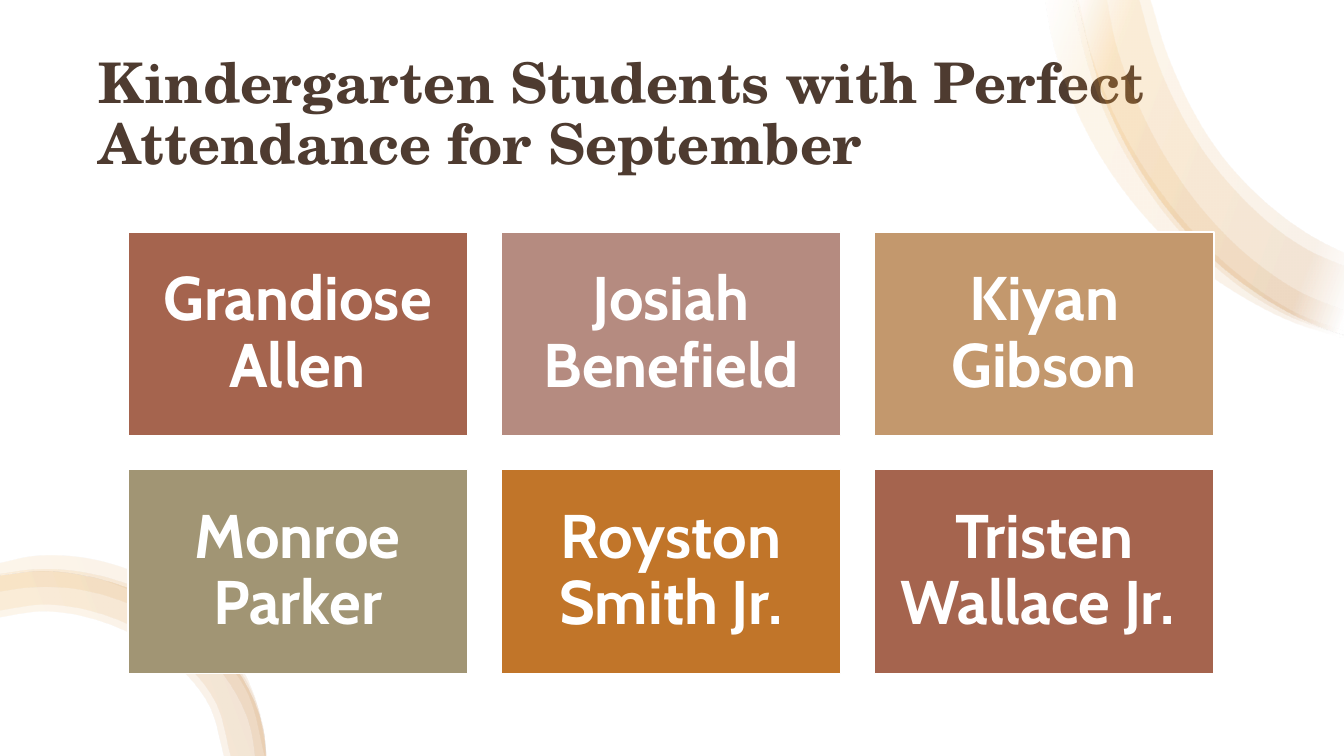
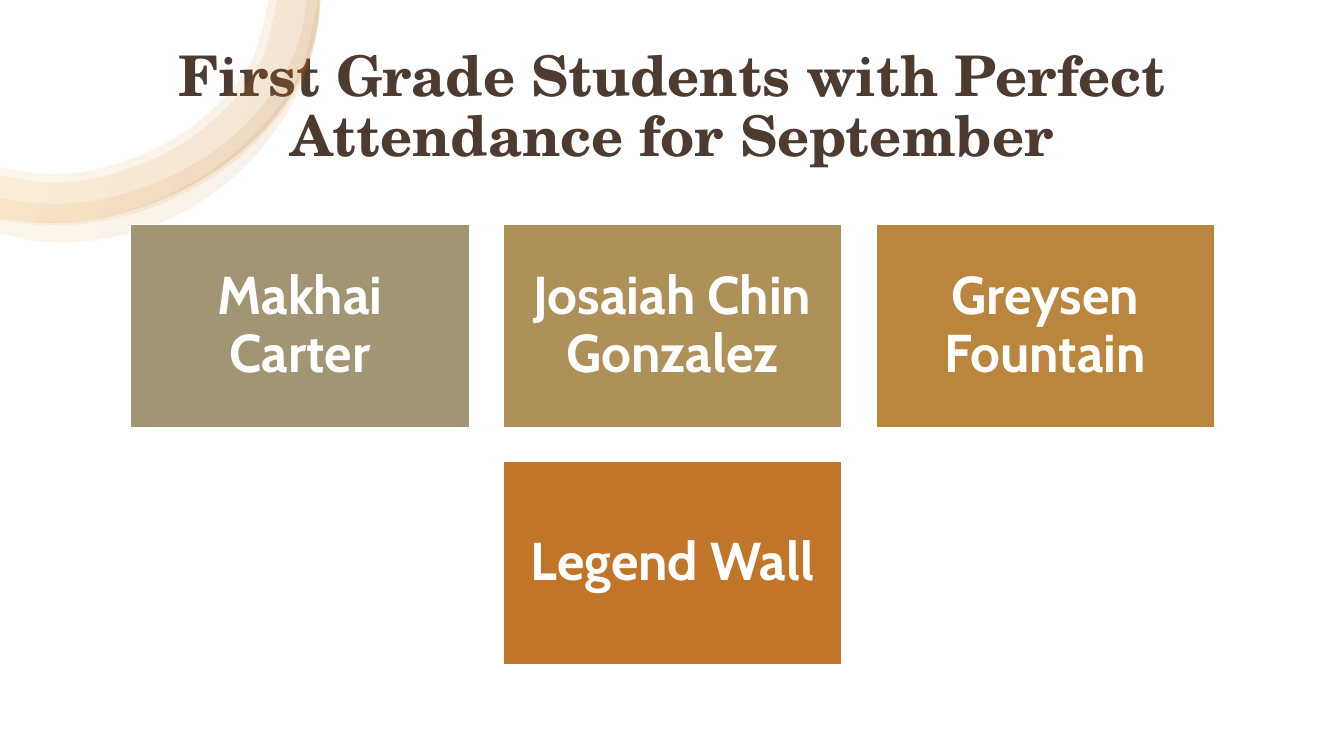
from math import dist
from typing import NamedTuple

from lxml import etree
from pptx import Presentation
from pptx.dml.color import RGBColor
from pptx.enum.shapes import MSO_SHAPE
from pptx.enum.text import MSO_ANCHOR, PP_ALIGN
from pptx.oxml.ns import qn
from pptx.util import Inches, Pt

RECTANGLE = MSO_SHAPE.RECTANGLE
MIDDLE = MSO_ANCHOR.MIDDLE
LEFT, CENTER = PP_ALIGN.LEFT, PP_ALIGN.CENTER

SLIDE_WIDTH, SLIDE_HEIGHT = Inches(13.333), Inches(7.5)
TITLE_FONT, NAME_FONT = "TeX Gyre Schola", "Cabin"
WHITE = RGBColor(0xFF, 0xFF, 0xFF)
BROWN = RGBColor(0x4E, 0x3B, 0x30)
RUST = RGBColor(0xA5, 0x64, 0x4E)
ROSE = RGBColor(0xB5, 0x8B, 0x80)
TAN = RGBColor(0xC3, 0x98, 0x6D)
SAGE = RGBColor(0xA1, 0x95, 0x74)
OLIVE = RGBColor(0xAE, 0x91, 0x59)
OCHRE = RGBColor(0xBA, 0x86, 0x3E)
ORANGE = RGBColor(0xC1, 0x75, 0x29)
AMBER = RGBColor(0xF0, 0xA2, 0x2E)

RIBBON_STOPS = ((2, WHITE), (16, ORANGE), (85, AMBER), (100, WHITE))
RIBBON_ANGLE = 160
RIBBON_OPACITY = 10
COLUMNS = 3
GAP_SHARE = 0.1


class Box(NamedTuple):
    """A region whose measures are percentages of the slide."""

    left: float
    top: float
    width: float
    height: float

    def to_emu(self):
        """Return left, top, width and height in slide units."""
        sides = (SLIDE_WIDTH, SLIDE_HEIGHT) * 2
        return [int(side * share / 100) for side, share in zip(sides, self)]


class Artwork(NamedTuple):
    """Ribbons as pairs of edges, drawn within a given extent."""

    extent: tuple
    ribbons: tuple


WHOLE_SLIDE = Box(0, 0, 100, 100)

RING_EDGE = ((3.17, 0), (3.16, 0.18), (2.86, 0.98), (2.24, 1.62),
             (1.41, 2.05), (0.49, 2.21), (0, 2.16))
RING = Artwork((3.2, 2.4), (
    (RING_EDGE,
     ((2.67, 0), (2.49, 0.61), (2, 1.18), (1.29, 1.58), (0.49, 1.73), (0, 1.66))),
    (RING_EDGE,
     ((2.75, 0), (2.57, 0.64), (2.06, 1.24), (1.32, 1.66), (0.49, 1.81), (0, 1.74))),
    (((3.17, 0), (3.13, 0.38), (2.99, 0.79), (2.46, 1.48), (1.71, 1.97),
      (0.84, 2.21), (0.38, 2.22), (0, 2.17)),
     ((3.04, 0), (2.98, 0.35), (2.6, 1.05), (2.32, 1.34), (1.61, 1.78),
      (0.81, 2), (0.39, 2.01), (0, 1.96))),
    (((3.19, 0), (3.02, 0.77), (2.53, 1.54), (1.79, 2.11), (0.86, 2.38),
      (0.38, 2.38), (0, 2.3)),
     ((3.16, 0), (2.96, 0.74), (2.42, 1.43), (1.68, 1.92), (0.84, 2.18),
      (0.39, 2.2), (0, 2.16))),
))

SWEEP_EDGE = ((0.35, 0), (0.66, 1.07), (1.19, 2), (1.9, 2.74), (2.76, 3.24), (3, 3.32))
SWEEP = Artwork((3, 3.35), (
    (((0.04, 0), (0.08, 0.26), (0.45, 1.31), (0.95, 2.06), (1.32, 2.45),
      (1.88, 2.87), (2.49, 3.19), (3, 3.35)),
     ((0.37, 0), (0.49, 0.52), (0.73, 1.15), (1.21, 1.94), (1.97, 2.73),
      (2.53, 3.1), (3, 3.28))),
    (SWEEP_EDGE,
     ((1.08, 0), (1.25, 0.55), (1.86, 1.64), (2.74, 2.38), (3, 2.51))),
    (((0.31, 0), (0.35, 0.2), (0.66, 1.19), (0.99, 1.79), (1.4, 2.33),
      (2.46, 3.14), (3, 3.33)),
     ((0.65, 0), (0.74, 0.44), (0.96, 1.04), (1.62, 2.11), (2.06, 2.55),
      (2.57, 2.9), (3, 3.08))),
    (SWEEP_EDGE,
     ((0.97, 0), (1.14, 0.59), (1.77, 1.72), (2.68, 2.5), (3, 2.64))),
))


def edge_tangents(anchors):
    """Return the unit-speed direction of the curve at each anchor."""
    lengths = [dist(start, end) for start, end in zip(anchors, anchors[1:])]
    slopes = [tuple((b - a) / length for a, b in zip(start, end))
              for start, end, length in zip(anchors, anchors[1:], lengths)]
    inner = [tuple((a * after + b * before) / (before + after)
                   for a, b in zip(slope, following))
             for slope, following, before, after
             in zip(slopes, slopes[1:], lengths, lengths[1:])]
    return [slopes[0], *inner, slopes[-1]]


def curve_controls(anchors):
    """Return the two control points of each curve between anchors."""
    tangents = edge_tangents(anchors)
    controls = []
    for index, (start, end) in enumerate(zip(anchors, anchors[1:])):
        reach = dist(start, end) / 3
        controls.append((
            tuple(p + reach * t for p, t in zip(start, tangents[index])),
            tuple(p - reach * t for p, t in zip(end, tangents[index + 1]))))
    return controls


def bend_edges(shape, edges):
    """Turn the straight lines along both edges into curves."""
    lines = list(shape._element.spPr.iter(qn("a:lnTo")))
    outer_count = len(edges[0]) - 1
    edge_lines = lines[:outer_count] + lines[outer_count + 1:]
    controls = curve_controls(edges[0]) + curve_controls(edges[1])
    for line, pair in zip(edge_lines, controls):
        curve = etree.Element(qn("a:cubicBezTo"))
        for x, y in pair:
            etree.SubElement(curve, qn("a:pt"), x=str(int(x - shape.left)),
                             y=str(int(y - shape.top)))
        curve.append(line[0])
        line.getparent().replace(line, curve)


def fill_ribbon(shape, angle):
    """Give a ribbon its translucent gradient without an outline."""
    shape.shadow.inherit = False
    shape.line.fill.background()
    shape.fill.gradient()
    shape.fill.gradient_angle = angle
    stop_list = shape._element.spPr.find(f".//{qn('a:gsLst')}")
    for stop in list(stop_list):
        stop_list.remove(stop)
    for position, color in RIBBON_STOPS:
        stop = etree.SubElement(stop_list, qn("a:gs"), pos=str(position * 1000))
        paint = etree.SubElement(stop, qn("a:srgbClr"), val=str(color))
        etree.SubElement(paint, qn("a:alpha"), val=str(RIBBON_OPACITY * 1000))


def add_ribbons(slide, box, artwork, flipped=False):
    """Fit the artwork into the box, upside down if flipped."""
    left, top, width, height = box.to_emu()
    extent_width, extent_height = artwork.extent

    def place(anchor):
        """Return the slide position of an anchor."""
        x, y = anchor
        down = extent_height - y if flipped else y
        return (int(left + width * x / extent_width),
                int(top + height * down / extent_height))

    for outer, inner in artwork.ribbons:
        edges = [place(p) for p in outer], [place(p) for p in reversed(inner)]
        outline = edges[0] + edges[1]
        builder = slide.shapes.build_freeform(*outline[0])
        builder.add_line_segments(outline[1:], close=True)
        ribbon = builder.convert_to_shape()
        bend_edges(ribbon, edges)
        fill_ribbon(ribbon, 360 - RIBBON_ANGLE if flipped else RIBBON_ANGLE)


def write_text(frame, text, font_name, size, color, alignment):
    """Write one bold, vertically centred paragraph."""
    frame.word_wrap = True
    frame.vertical_anchor = MIDDLE
    paragraph = frame.paragraphs[0]
    paragraph.text = text
    paragraph.alignment = alignment
    paragraph.line_spacing = 0.9
    font = paragraph.font
    font.name, font.size, font.bold = font_name, Pt(size), True
    font.color.rgb = color


def add_title(slide, box, text, alignment):
    """Place the slide title in the box."""
    frame = slide.shapes.add_textbox(*box.to_emu()).text_frame
    write_text(frame, text, TITLE_FONT, 40, BROWN, alignment)


def add_rectangle(slide, measures, color):
    """Add a plain filled rectangle without shadow or outline."""
    rectangle = slide.shapes.add_shape(RECTANGLE, *map(int, measures))
    rectangle.shadow.inherit = False
    rectangle.fill.solid()
    rectangle.fill.fore_color.rgb = color
    rectangle.line.fill.background()
    return rectangle


def add_name_tiles(slide, box, students, size, inset):
    """Lay out name tiles in two rows, centring a short last row."""
    left, top, width, height = box.to_emu()
    tile_width = width / (COLUMNS + (COLUMNS - 1) * GAP_SHARE)
    gap = tile_width * GAP_SHARE
    tile_height = (height - gap) / 2
    for index, (name, color) in enumerate(students):
        row, column = divmod(index, COLUMNS)
        in_row = min(COLUMNS, len(students) - row * COLUMNS)
        offset = column + (COLUMNS - in_row) / 2
        tile = add_rectangle(slide, (
            left + offset * (tile_width + gap), top + row * (tile_height + gap),
            tile_width, tile_height), color)
        tile.line.color.rgb = WHITE
        tile.line.width = Pt(1)
        frame = tile.text_frame
        frame.margin_left = frame.margin_right = Inches(inset)
        frame.margin_top = frame.margin_bottom = Inches(inset)
        write_text(frame, name, NAME_FONT, size, WHITE, CENTER)


def add_blank_slide(presentation):
    """Add a blank slide covered by a white panel."""
    slide = presentation.slides.add_slide(presentation.slide_layouts[6])
    add_rectangle(slide, WHOLE_SLIDE.to_emu(), WHITE)
    return slide


def build_kindergarten(presentation):
    """Build the kindergarten slide."""
    slide = add_blank_slide(presentation)
    add_title(slide, Box(6.6, 6.67, 86.8, 17.33),
              "Kindergarten Students with Perfect Attendance for September", LEFT)
    add_ribbons(slide, Box(77.5, 0, 22.5, 44.67), SWEEP)
    add_ribbons(slide, Box(0, 73.44, 19.92, 26.56), RING, flipped=True)
    add_name_tiles(slide, Box(9.53, 30.67, 80.8, 58.4), (
        ("Grandiose Allen", RUST),
        ("Josiah Benefield", ROSE),
        ("Kiyan Gibson", TAN),
        ("Monroe Parker", SAGE),
        ("Royston Smith Jr.", ORANGE),
        ("Tristen Wallace Jr. ", RUST),
    ), 44, 0.18)


def build_first_grade(presentation):
    """Build the first grade slide."""
    slide = add_blank_slide(presentation)
    add_title(slide, Box(9.68, 4.67, 80.65, 19.33),
              "First Grade Students with Perfect Attendance for September", CENTER)
    add_ribbons(slide, Box(0, 0, 24, 32), RING)
    add_name_tiles(slide, Box(9.72, 29.73, 80.65, 58.2), (
        ("Makhai Carter", SAGE),
        ("Josaiah Chin Gonzalez", OLIVE),
        ("Greysen Fountain", OCHRE),
        ("Legend Wall", ORANGE),
    ), 38, 0.16)


def main():
    """Build and save the presentation."""
    presentation = Presentation()
    presentation.slide_width, presentation.slide_height = SLIDE_WIDTH, SLIDE_HEIGHT
    build_kindergarten(presentation)
    build_first_grade(presentation)
    presentation.save("out.pptx")


if __name__ == "__main__":
    main()
